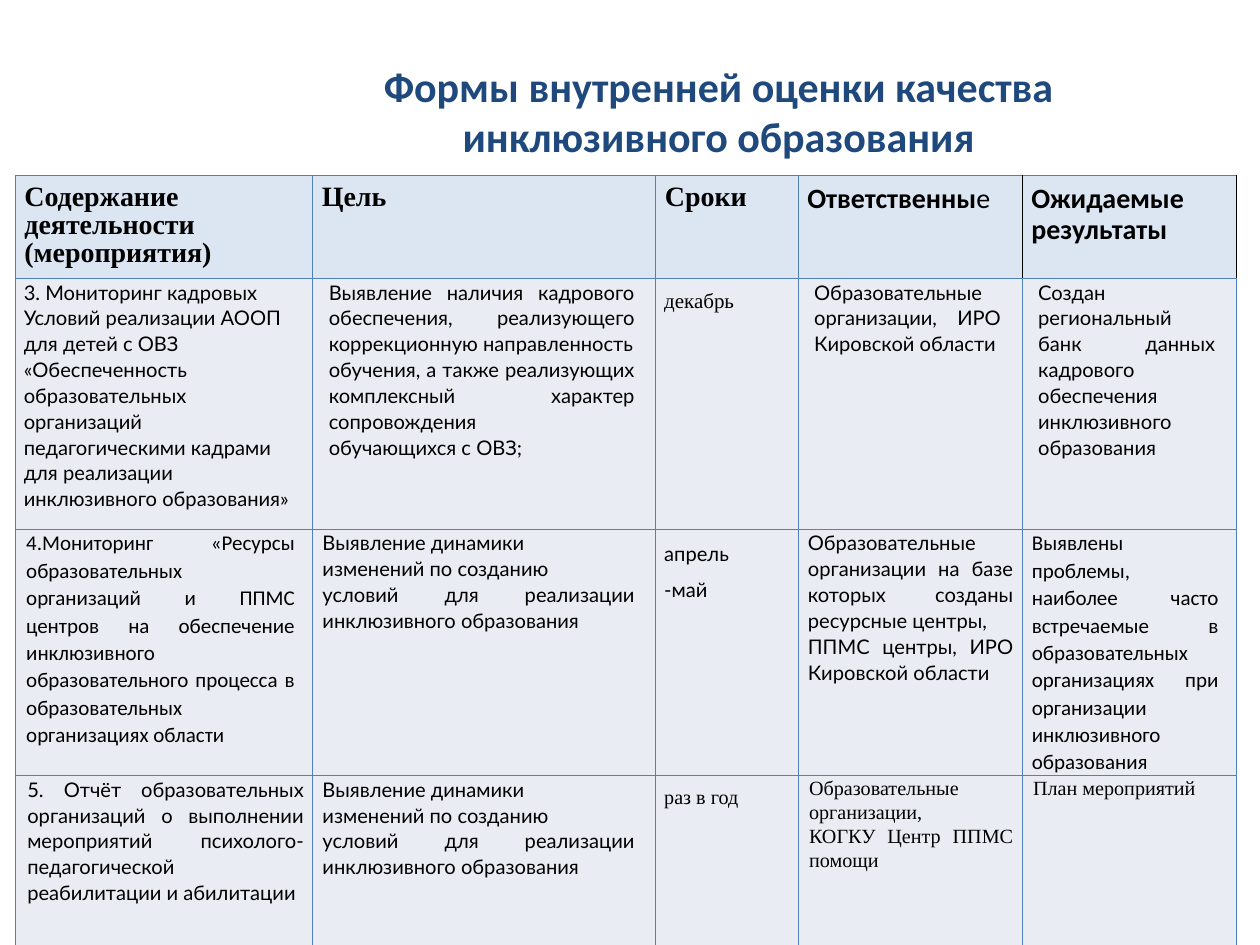
from dataclasses import dataclass
from lxml.etree import SubElement
from pptx import Presentation
from pptx.dml.color import RGBColor
from pptx.enum.text import MSO_ANCHOR, MSO_AUTO_SIZE, PP_ALIGN
from pptx.oxml.ns import qn
from pptx.util import Pt


@dataclass(frozen=True)
class Theme:
    title_color: str = "1F497D"
    ink: str = "000000"
    rule: str = "4F81BD"
    header_fill: str = "DCE6F2"
    body_fill: str = "E9ECF3"
    sans: str = "Calibri"
    body: str = "Lato"
    serif: str = "Times New Roman"
    title_size: float = 24
    header_size: float = 16
    large_size: float = 12
    body_size: float = 11.5
    rule_width: float = 0.23


THEME = Theme()


@dataclass(frozen=True)
class Entry:
    """The text of one body cell; indents are in points."""
    lines: tuple
    left: float = 0
    right: float = 0
    font: str = THEME.body
    size: float = THEME.body_size
    spacing: float = 1.07
    align: PP_ALIGN = PP_ALIGN.JUSTIFY


TITLE = "Формы внутренней оценки качества инклюзивного образования"
COLUMN_WIDTHS = (170, 196, 81.4, 128, 122.4)
ROW_HEIGHTS = (59, 143.3, 140.6, 98.5)

# Each header cell: its font, then its lines.
HEADERS = (
    (THEME.serif, ("Содержание деятельности", "(мероприятия)")),
    (THEME.serif, ("Цель",)),
    (THEME.serif, ("Сроки",)),
    (THEME.sans, ("Ответственны",)),
    (THEME.sans, ("Ожидаемые", "результаты")),
)
RESPONSIBLE, RESULTS = 3, 4

DYNAMICS = Entry(
    ("Выявление динамики", "изменений по созданию",
     "условий для реализации инклюзивного образования"), left=0.7, right=7)

BODY = (
    (
        Entry(("3. Мониторинг кадровых",
               "Условий реализации АООП для детей с ОВЗ «Обеспеченность "
               "образовательных организаций педагогическими кадрами для "
               "реализации инклюзивного образования»"), align=PP_ALIGN.LEFT),
        Entry(("Выявление наличия кадрового обеспечения, реализующего "
               "коррекционную направленность",
               "обучения, а также реализующих комплексный характер сопровождения",
               "обучающихся с ОВЗ;"), left=4.3, right=7),
        Entry(("декабрь",), font=THEME.serif, size=THEME.large_size, spacing=1.5),
        Entry(("Образовательные организации, ИРО Кировской области",),
              left=4.3, right=7),
        Entry(("Создан региональный банк данных кадрового обеспечения "
               "инклюзивного образования",), left=4.3, right=7),
    ),
    (
        Entry(("4.Мониторинг «Ресурсы образовательных организаций и ППМС центров "
               "на обеспечение инклюзивного образовательного процесса в "
               "образовательных организациях области",),
              left=1.4, right=5, font=THEME.sans, size=THEME.large_size),
        DYNAMICS,
        Entry(("апрель", "-май"), spacing=1.5),
        Entry(("Образовательные организации на базе которых созданы ресурсные центры,",
               "ППМС центры, ИРО Кировской области"), left=0.7),
        Entry(("Выявлены проблемы, наиболее часто встречаемые в образовательных "
               "организациях при организации инклюзивного образования",),
              left=0.7, right=5, font=THEME.sans, size=THEME.large_size),
    ),
    (
        Entry(("5. Отчёт образовательных организаций о выполнении мероприятий "
               "психолого-педагогической реабилитации и абилитации",), left=2),
        DYNAMICS,
        Entry(("раз в год",), font=THEME.serif, spacing=1.5),
        Entry(("Образовательные организации,", "КОГКУ Центр ППМС помощи"),
              left=1.4, font=THEME.serif),
        Entry(("План мероприятий",), left=1.4, font=THEME.serif),
    ),
)


def style_span(span, font, size, color=THEME.ink, bold=False):
    span.font.name = font
    span.font.size = Pt(size)
    span.font.bold = bold
    span.font.color.rgb = RGBColor.from_string(color)


def add_title(page):
    box = page.shapes.title
    box.left, box.top, box.width, box.height = Pt(167), Pt(31), Pt(487.4), Pt(57.6)
    frame = box.text_frame
    frame.text = TITLE
    frame.word_wrap = True
    frame.auto_size = MSO_AUTO_SIZE.NONE
    frame.vertical_anchor = MSO_ANCHOR.TOP
    para = frame.paragraphs[0]
    para.alignment = PP_ALIGN.CENTER
    style_span(para.runs[0], THEME.sans, THEME.title_size, THEME.title_color, True)


def draw_borders(cell, left, right):
    """Rule all four sides; left and right are the side colours."""
    sides = {"L": left, "R": right, "T": THEME.rule, "B": THEME.rule}
    for side, color in sides.items():
        line = SubElement(cell._tc.get_or_add_tcPr(), qn(f"a:ln{side}"),
                          w=str(Pt(THEME.rule_width)))
        fill = SubElement(line, qn("a:solidFill"))
        SubElement(fill, qn("a:srgbClr"), val=color)


def format_cell(cell, fill, side, top, bottom, borders=(THEME.rule, THEME.rule)):
    draw_borders(cell, *borders)
    cell.fill.solid()
    cell.fill.fore_color.rgb = RGBColor.from_string(fill)
    cell.margin_left = cell.margin_right = Pt(side)
    cell.margin_top, cell.margin_bottom = Pt(top), Pt(bottom)
    cell.vertical_anchor = MSO_ANCHOR.TOP


def fill_header(cells):
    borders = {RESPONSIBLE: (THEME.rule, THEME.ink), RESULTS: (THEME.ink, THEME.ink)}
    for column, (font, lines) in enumerate(HEADERS):
        cell = cells[column]
        format_cell(cell, THEME.header_fill, 5.4, 5, 3.6,
                    borders.get(column, (THEME.rule, THEME.rule)))
        cell.text_frame.text = "\n".join(lines)
        for para in cell.text_frame.paragraphs:
            para.line_spacing = 0.9
            style_span(para.runs[0], font, THEME.header_size, bold=True)
    ending = cells[RESPONSIBLE].text_frame.paragraphs[0].add_run()
    ending.text = "е"
    style_span(ending, THEME.sans, THEME.header_size)


def fill_entry(cell, entry):
    format_cell(cell, THEME.body_fill, 5, 0, 0)
    cell.text_frame.text = "\n".join(entry.lines)
    for para in cell.text_frame.paragraphs:
        para.alignment = entry.align
        para.line_spacing = entry.spacing
        indents = para._p.get_or_add_pPr()
        indents.set("marL", str(Pt(entry.left)))
        indents.set("marR", str(Pt(entry.right)))
        style_span(para.runs[0], entry.font, entry.size)


def add_monitoring_table(page):
    frame = page.shapes.add_table(
        len(ROW_HEIGHTS), len(COLUMN_WIDTHS), Pt(8.6), Pt(100.1),
        Pt(sum(COLUMN_WIDTHS)), Pt(sum(ROW_HEIGHTS)))
    table = frame.table
    table.first_row = table.horz_banding = False
    for column, width in zip(table.columns, COLUMN_WIDTHS):
        column.width = Pt(width)
    for row, height in zip(table.rows, ROW_HEIGHTS):
        row.height = Pt(height)
    fill_header(table.rows[0].cells)
    for row_index, entries in enumerate(BODY, start=1):
        for column_index, entry in enumerate(entries):
            fill_entry(table.cell(row_index, column_index), entry)


def main():
    deck = Presentation()
    deck.slide_width, deck.slide_height = Pt(720), Pt(540)
    page = deck.slides.add_slide(deck.slide_layouts.get_by_name("Title Only"))
    add_title(page)
    add_monitoring_table(page)
    deck.save("out.pptx")


if __name__ == "__main__":
    main()
